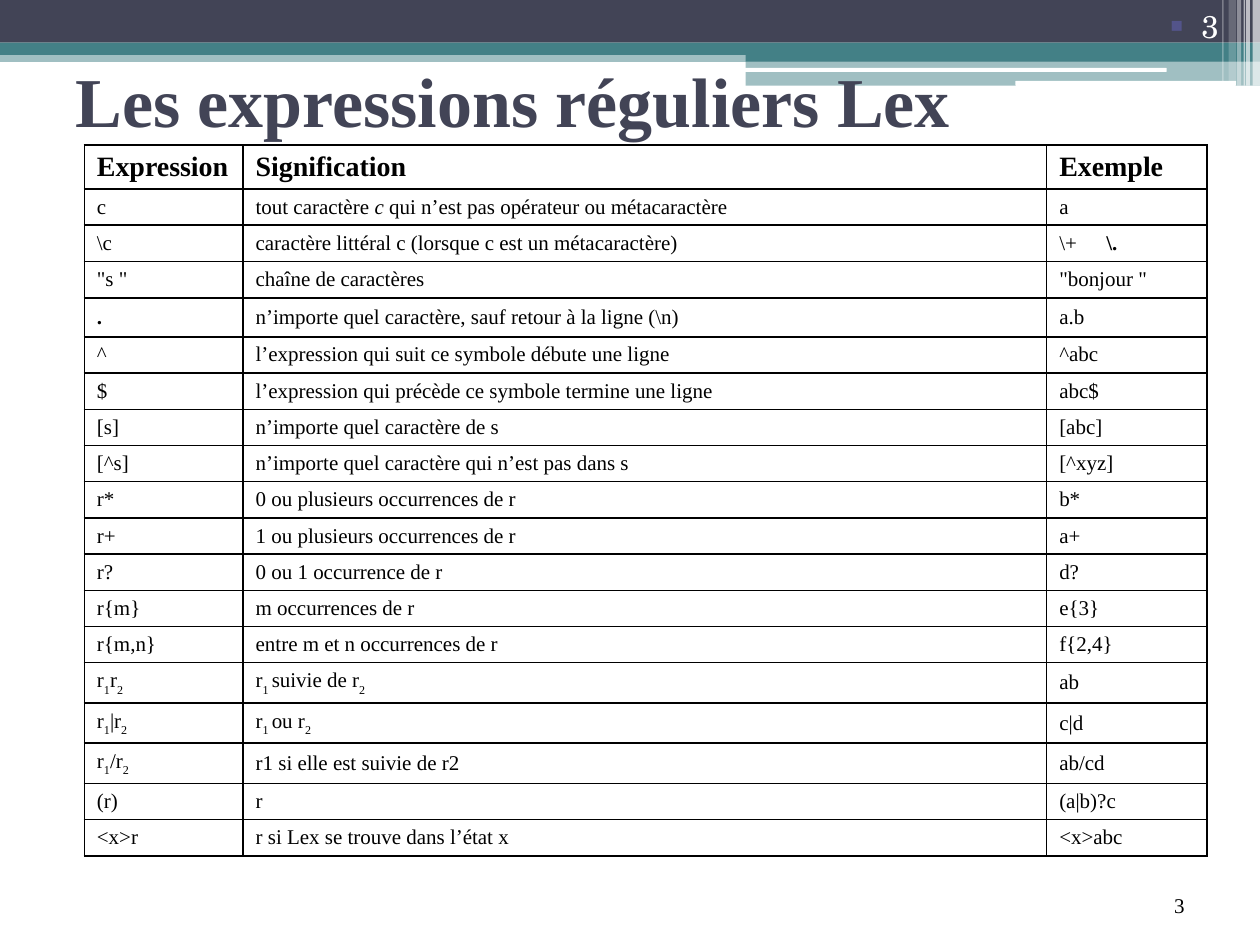
from lxml import etree
from pptx import Presentation
from pptx.dml.color import RGBColor
from pptx.enum.shapes import MSO_SHAPE
from pptx.enum.text import MSO_ANCHOR, MSO_AUTO_SIZE, PP_ALIGN
from pptx.oxml.ns import qn
from pptx.util import Cm, Pt

RECTANGLE, ROUNDED = MSO_SHAPE.RECTANGLE, MSO_SHAPE.ROUNDED_RECTANGLE
TOP, MIDDLE, BOTTOM = MSO_ANCHOR.TOP, MSO_ANCHOR.MIDDLE, MSO_ANCHOR.BOTTOM
LEFT, RIGHT = PP_ALIGN.LEFT, PP_ALIGN.RIGHT
NO_AUTOFIT = MSO_AUTO_SIZE.NONE

SERIF, SCHOLA = "Times New Roman", "TeX Gyre Schola"
NAVY, TEAL, WHITE, BLACK, VIOLET = "424456", "438086", "FFFFFF", "000000", "53548A"
BOLD, ITALIC, SUBSCRIPT = {"bold": True}, {"italic": True}, {"subscript": True}

BANDS = [
    (0, 1.02, 25.4, 0.23, TEAL, 50),
    (0, 0, 25.4, 0.86, NAVY, 100),
    (0, 0.86, 25.4, 0.25, TEAL, 100),
    (15.03, 0.99, 10.37, 0.25, TEAL, 100),
    (15.03, 1.23, 10.37, 0.5, TEAL, 50),
]
WHITE_BARS = [(15.01, 1.37, 8.51, 0.08), (20.47, 1.63, 4.45, 0.1)]
STRIPES = [
    (25.25, 0.15, 1.73, 65),
    (25.12, 0.08, 1.73, 65),
    (25.07, 0.03, 1.73, 60),
    (24.94, 0.08, 1.73, 40),
    (24.77, 0.15, 1.63, 20),
    (24.64, 0.03, 1.63, 30),
]

COLUMN_WIDTHS = [3.2, 16.2, 3.23]
HEADER_HEIGHT, ROW_HEIGHT = 0.89, 0.73
SPECIAL_HEIGHTS = {3: 0.74, 4: 0.78, 14: 0.81, 15: 0.81, 16: 0.81}


def indexed_pair(separator):
    """Return the runs for r1 and r2 around a separator."""
    return [("r", {}), ("1", SUBSCRIPT), (separator + "r", {}), ("2", SUBSCRIPT)]


def indexed_phrase(words):
    """Return the runs for r1 and r2 joined by words."""
    return [("r", {}), ("1 ", SUBSCRIPT), (words + " r", {}), ("2", SUBSCRIPT)]


ROWS = [
    ("Expression", "Signification", "Exemple"),
    ("c", [("tout caractère ", {}), ("c", ITALIC),
           (" qui n’est pas opérateur ou métacaractère", {})], "a"),
    ("\\c", "caractère littéral c (lorsque c est un métacaractère)",
     [("\\+\t", {}), ("\\.", BOLD)]),
    ('"s "', "chaîne de caractères", '"bonjour "'),
    ([(".", BOLD)], "n’importe quel caractère, sauf retour à la ligne (\\n)", "a.b"),
    ("^", "l’expression qui suit ce symbole débute une ligne", "^abc"),
    ("$", "l’expression qui précède ce symbole termine une ligne", "abc$"),
    ("[s]", "n’importe quel caractère de s", "[abc]"),
    ("[^s]", "n’importe quel caractère qui n’est pas dans s", "[^xyz]"),
    ("r*", "0 ou plusieurs occurrences de r", "b*"),
    ("r+", "1 ou plusieurs occurrences de r", "a+"),
    ("r?", "0 ou 1 occurrence de r", "d?"),
    ("r{m}", "m occurrences de r", "e{3}"),
    ("r{m,n}", "entre m et n occurrences de r", "f{2,4}"),
    (indexed_pair(""), indexed_phrase("suivie de"), "ab"),
    (indexed_pair("|"), indexed_phrase("ou"), "c|d"),
    (indexed_pair("/"), "r1 si elle est suivie de r2", "ab/cd"),
    ("(r)", "r", "(a|b)?c"),
    ("<x>r", "r si Lex se trouve dans l’état x", "<x>abc"),
]


def color(value):
    """Convert a hex string to a colour."""
    return RGBColor.from_string(value)


def write_text(frame, content, size=12, font=SERIF, fill=BLACK, bold=False,
               align=LEFT, hanging=0, bullet=None):
    """Write a string or a list of formatted runs as one paragraph."""
    paragraph = frame.paragraphs[0]
    paragraph.alignment = align
    properties = paragraph._p.get_or_add_pPr()
    properties.set("marL", str(Cm(hanging)))
    properties.set("indent", str(-Cm(hanging)))
    if bullet:
        bullet_color = etree.SubElement(properties, qn("a:buClr"))
        etree.SubElement(bullet_color, qn("a:srgbClr"), val=VIOLET)
        etree.SubElement(properties, qn("a:buSzPct"), val="65000")
        etree.SubElement(properties, qn("a:buFont"), typeface=SERIF)
        etree.SubElement(properties, qn("a:buChar"), char=bullet)
    runs = [(content, {})] if isinstance(content, str) else content
    for text, style in runs:
        run = paragraph.add_run()
        run.text = text
        run.font.size = Pt(size)
        run.font.name = font
        run.font.color.rgb = color(fill)
        run.font.bold = style.get("bold", bold)
        run.font.italic = style.get("italic", False)
        if style.get("subscript"):
            run._r.get_or_add_rPr().set("baseline", "-30000")


def add_block(slide, left, top, width, height, fill, opacity=100, kind=RECTANGLE):
    """Add a borderless block with an opacity in percent."""
    shape = slide.shapes.add_shape(kind, Cm(left), Cm(top), Cm(width), Cm(height))
    shape.shadow.inherit = False
    shape.fill.solid()
    shape.fill.fore_color.rgb = color(fill)
    if opacity < 100:
        solid = shape.element.spPr.find(".//" + qn("a:srgbClr"))
        etree.SubElement(solid, qn("a:alpha"), val=str(opacity * 1000))
    shape.line.fill.background()


def add_banner(slide):
    """Add the coloured bands and white stripes at the top."""
    for *box, fill, opacity in BANDS:
        add_block(slide, *box, fill, opacity)
    for box in WHITE_BARS:
        add_block(slide, *box, WHITE, kind=ROUNDED)
    for left, width, height, opacity in STRIPES:
        add_block(slide, left, 0, width, height, WHITE, opacity)


def place_title(slide, text):
    """Move the title placeholder above the banner and fill it."""
    title = slide.shapes.title
    title.element.getparent().append(title.element)
    title.left, title.top, title.width, title.height = Cm(1.27), Cm(0.53), Cm(22.86), Cm(2.97)
    frame = title.text_frame
    frame.auto_size = NO_AUTOFIT
    frame.vertical_anchor = MIDDLE
    write_text(frame, text, size=40, fill=NAVY, bold=True, hanging=2.24)


def draw_borders(cell):
    """Draw a thin black line on each side of a cell."""
    properties = cell._tc.get_or_add_tcPr()
    for side in ("lnL", "lnR", "lnT", "lnB"):
        line = etree.SubElement(properties, qn("a:" + side), w=str(Pt(1)))
        solid = etree.SubElement(line, qn("a:solidFill"))
        etree.SubElement(solid, qn("a:srgbClr"), val=BLACK)


def add_expression_table(slide):
    """Add the table of expressions."""
    heights = [HEADER_HEIGHT] + [SPECIAL_HEIGHTS.get(index, ROW_HEIGHT)
                                 for index in range(1, len(ROWS))]
    table = slide.shapes.add_table(
        len(ROWS), len(COLUMN_WIDTHS), Cm(1.7), Cm(2.92),
        Cm(sum(COLUMN_WIDTHS)), Cm(sum(heights))).table
    table.first_row = table.horz_banding = False
    for column, width in zip(table.columns, COLUMN_WIDTHS):
        column.width = Cm(width)
    for index, (row, height, contents) in enumerate(zip(table.rows, heights, ROWS)):
        row.height = Cm(height)
        header = index == 0
        for cell, content in zip(row.cells, contents):
            draw_borders(cell)
            cell.fill.background()
            cell.vertical_anchor = TOP if header else MIDDLE
            write_text(cell.text_frame, content, size=16 if header else 12,
                       bold=header, hanging=0.95)


def add_page_number(slide, left, top, width, height, **style):
    """Add a right-aligned page number."""
    box = slide.shapes.add_textbox(Cm(left), Cm(top), Cm(width), Cm(height))
    box.text_frame.word_wrap = True
    box.text_frame.vertical_anchor = BOTTOM
    write_text(box.text_frame, "3", align=RIGHT, **style)


def main():
    """Build and save the slide."""
    presentation = Presentation()
    presentation.slide_width, presentation.slide_height = Cm(25.4), Cm(19.05)
    slide = presentation.slides.add_slide(presentation.slide_layouts[5])
    add_banner(slide)
    place_title(slide, "Les expressions réguliers Lex")
    add_expression_table(slide)
    add_page_number(slide, 22.71, 0, 2.11, 1.02, size=18, font=SCHOLA,
                    fill=WHITE, hanging=0.62, bullet="■")
    add_page_number(slide, 18.21, 17.35, 5.92, 1.27)
    presentation.save("out.pptx")


if __name__ == "__main__":
    main()
